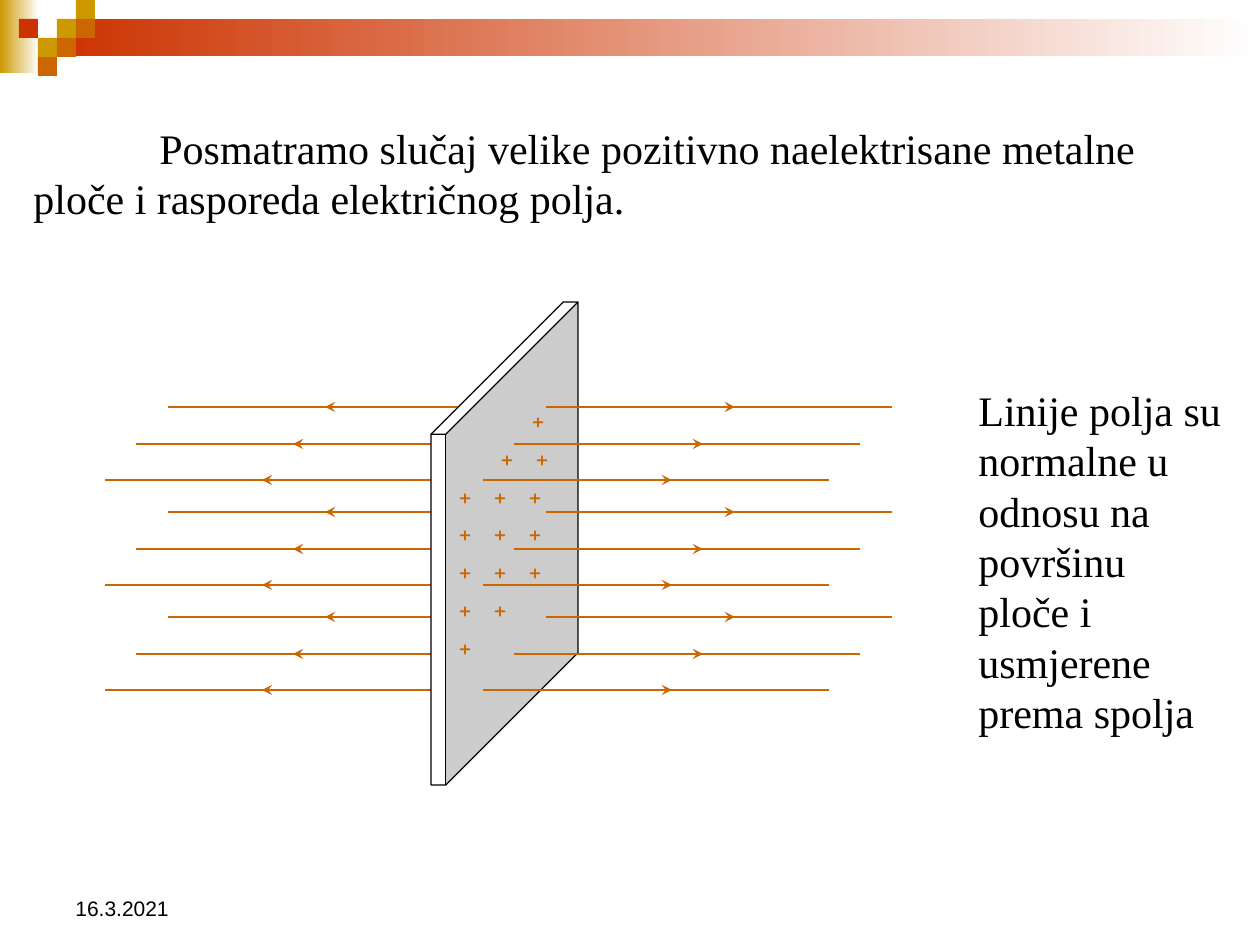
from lxml.etree import SubElement
from pptx import Presentation
from pptx.dml.color import RGBColor
from pptx.enum.shapes import MSO_CONNECTOR as CONN, MSO_SHAPE as SHAPE
from pptx.enum.text import MSO_ANCHOR as ANCHOR
from pptx.oxml.ns import qn
from pptx.util import Pt

PX = 914400 / 126  # EMU per pixel
COLORS = {"gold": "CC9900", "red": "CC3300", "orange": "CC6600",
          "white": "FFFFFF", "black": "000000"}
RGB = {name: RGBColor.from_string(code) for name, code in COLORS.items()}


def px(*lengths):
    return [round(n * PX) for n in lengths]


def add_text(box, lines, font, size, color):
    tf = s.shapes.add_textbox(*px(*box)).text_frame
    tf.word_wrap = True
    tf.text = "\n".join(lines)
    for p in tf.paragraphs:
        for r in p.runs:
            r.font.name, r.font.size = font, Pt(size)
            r.font.color.rgb = RGB[color]
    return tf


prs = Presentation()
prs.slide_width, prs.slide_height = px(1260, 945)
s = prs.slides.add_slide(prs.slide_layouts[6])

# Header: gradient bars fading to white
for box, color in (((0, 0, 39, 73), "gold"), ((57, 19, 1203, 37), "red")):
    sp = s.shapes.add_shape(SHAPE.RECTANGLE, *px(*box))
    sp.shadow.inherit = False
    sp.line.fill.background()
    sp.fill.gradient()
    sp.fill.gradient_angle = 0
    for stop, name in zip(sp.fill.gradient_stops, (color, "white")):
        stop.color.rgb = RGB[name]

# Header: mosaic squares on a grid (column, row)
SQUARE = 19
for col, row, color in ((3, 1, "gold"), (4, 0, "gold"), (4, 1, "orange"),
                        (2, 2, "gold"), (1, 1, "red"), (3, 2, "orange"),
                        (2, 3, "orange")):
    sp = s.shapes.add_shape(SHAPE.RECTANGLE, *px(col * SQUARE, row * SQUARE, SQUARE, SQUARE))
    sp.shadow.inherit = False
    sp.line.fill.background()
    sp.fill.solid()
    sp.fill.fore_color.rgb = RGB[color]

# Date and introduction
tf = add_text((63, 861, 294, 66), ["16.3.2021"], "Arial", 12, "black")
tf.vertical_anchor = ANCHOR.BOTTOM
tf = add_text((21, 116, 1218, 115),
              ["Posmatramo slučaj velike pozitivno naelektrisane metalne "
               "ploče i rasporeda električnog polja."],
              "Times New Roman", 24, "black")
tf.paragraphs[0]._p.get_or_add_pPr().set("indent", str(px(126)[0]))

# Field lines: three groups of three on each side of the plate
LENGTH, OVERLAP = 189, 32
for start_x, direction in ((514, -1), (546, 1)):
    for top in (407, 512, 617):
        for dx, dy in ((0, 0), (-32, 37), (-63, 73)):
            x, y = start_x + dx, top + dy
            tip = x + direction * LENGTH
            rest = tip - direction * OVERLAP
            for x1, x2, arrow in ((x, tip, True), (rest, rest + direction * LENGTH, False)):
                line = s.shapes.add_connector(CONN.STRAIGHT, *px(x1, y, x2, y))
                line.line.color.rgb = RGB["orange"]
                line.line.width = Pt(0.75)
                if arrow:
                    SubElement(line.line._get_or_add_ln(), qn("a:tailEnd"), type="stealth")
                SubElement(line._element.spPr, qn("a:effectLst"))

    # Metal plate stands in front of the left lines, behind the right ones
    if direction == -1:
        sp = s.shapes.add_shape(SHAPE.CUBE, *px(431, 302, 147, 483))
        sp.adjustments[0] = 0.9
        sp.shadow.inherit = False
        sp.fill.solid()
        sp.fill.fore_color.rgb = RGB["white"]
        sp.line.color.rgb = RGB["black"]
        sp.line.width = Pt(0.75)

        # Positive charges: each plus is centred on a tab stop
        full = (20, 55, 90)
        charges = [(93,), (62, 97), full, full, full, full[:2], full[:1]]
        tf = add_text((445, 399, 132, 264), ["\t+" * len(stops) for stops in charges],
                      "Comic Neue", 18, "orange")
        tf.margin_left = tf.margin_right = tf.margin_top = tf.margin_bottom = 0
        for p, stops in zip(tf.paragraphs, charges):
            tabs = SubElement(p._p.get_or_add_pPr(), qn("a:tabLst"))
            for stop in stops:
                SubElement(tabs, qn("a:tab"), pos=str(px(stop)[0]), algn="ctr")

# Explanation
add_text((966, 378, 273, 369),
         ["Linije polja su normalne u odnosu na površinu ploče i usmjerene prema spolja"],
         "Times New Roman", 24, "black")

prs.save("out.pptx")
